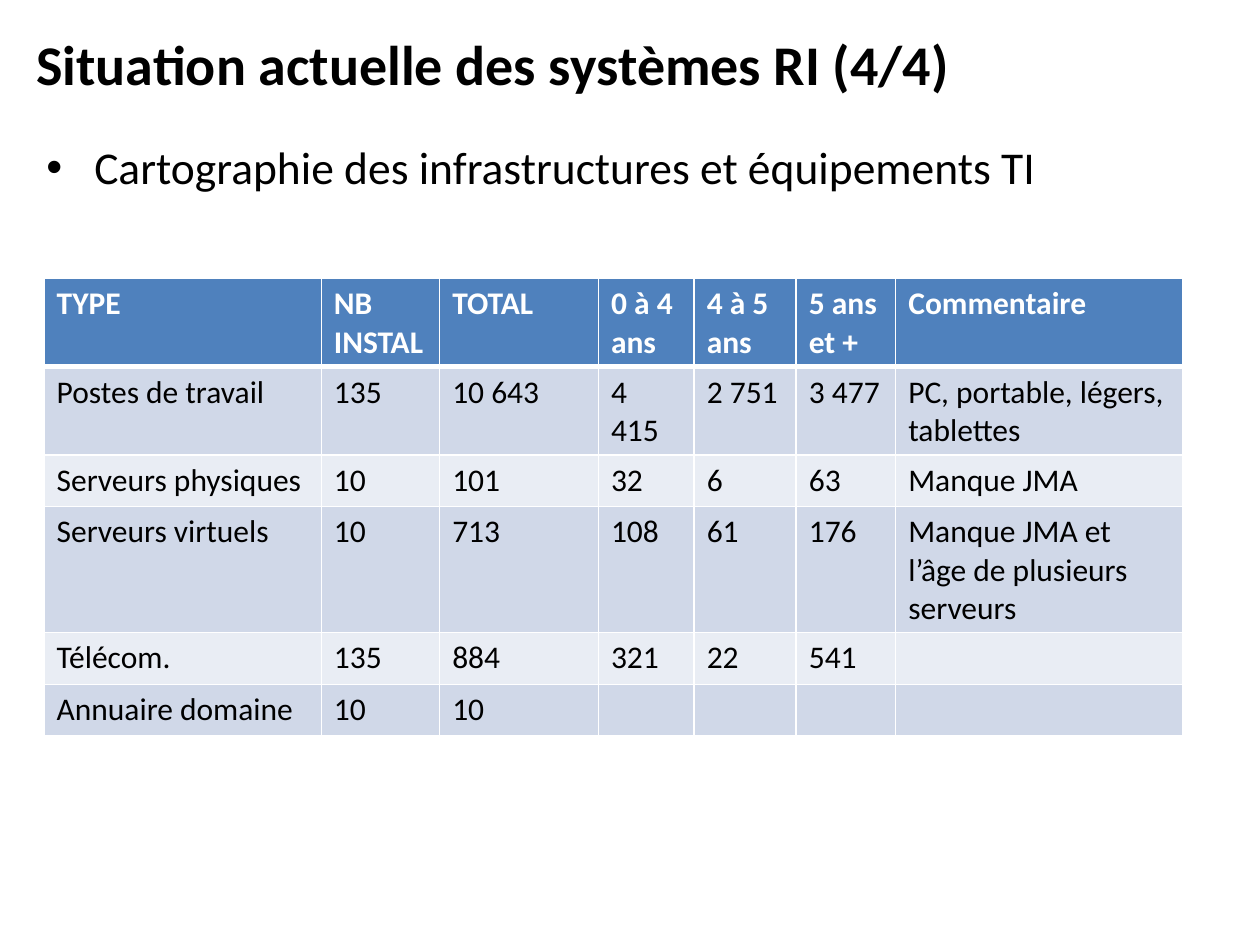
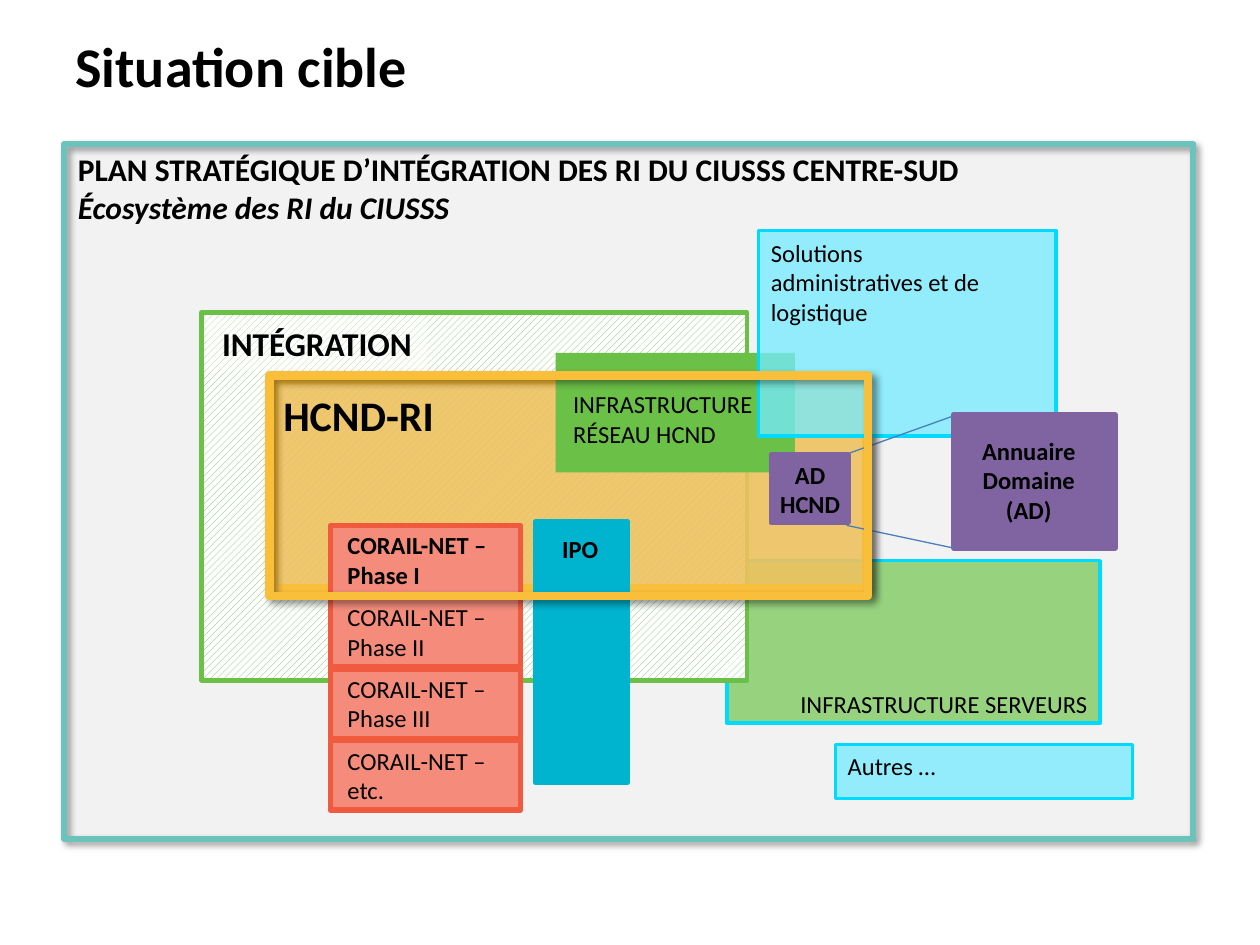
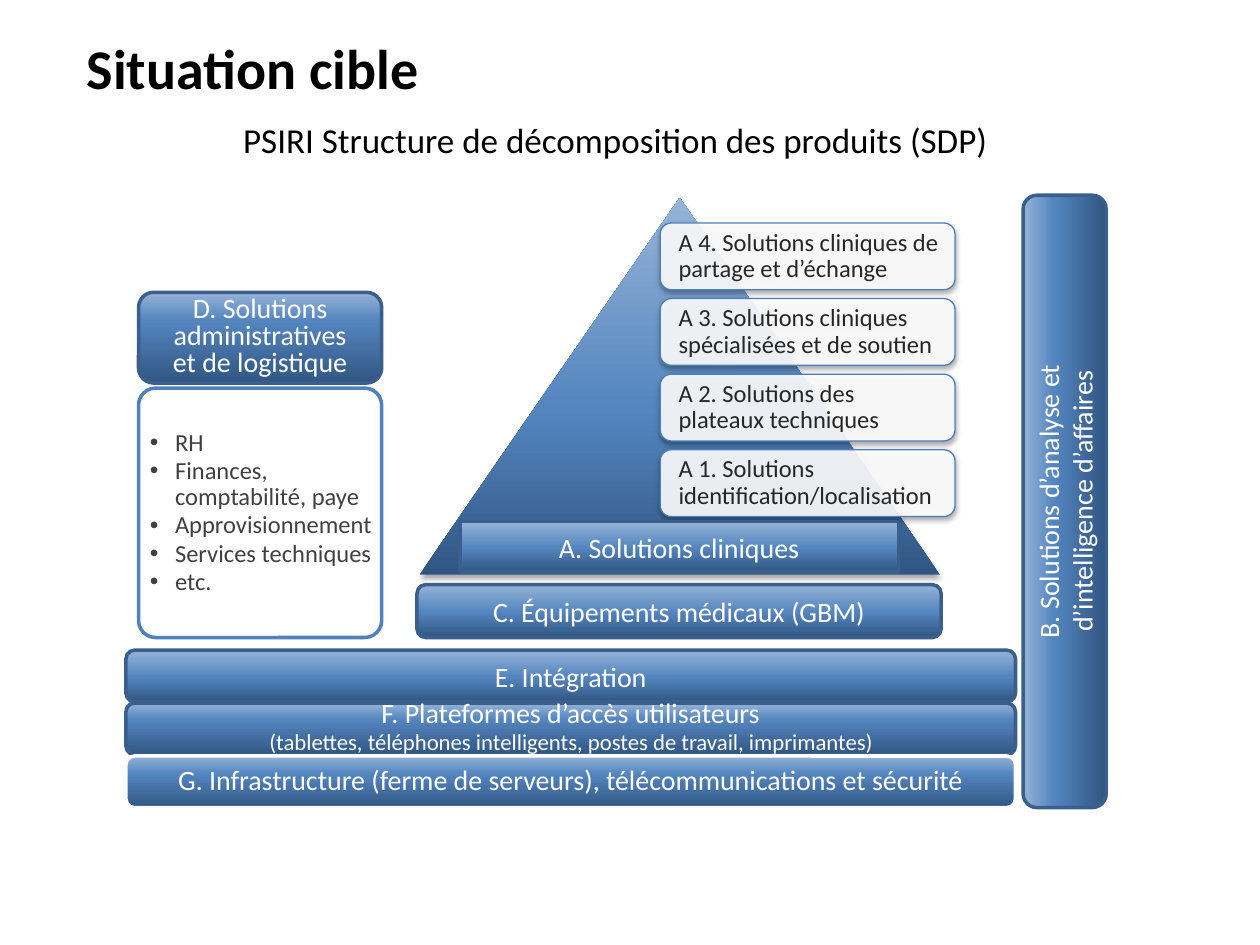
"""Build three slides on the current and target state of the RI systems."""
from lxml import etree
from pptx import Presentation
from pptx import util as u
from pptx.dml.color import RGBColor
from pptx.enum import dml, shapes, text
from pptx.oxml.ns import qn

PX = 9144
FONT = "Calibri"

BLACK = RGBColor(0x00, 0x00, 0x00)
WHITE = RGBColor(0xFF, 0xFF, 0xFF)
INK = RGBColor(0x26, 0x26, 0x26)
GREY_INK = RGBColor(0x40, 0x40, 0x40)
PALE_GREY = RGBColor(0xF2, 0xF2, 0xF2)
HEADER_BLUE = RGBColor(0x4F, 0x81, 0xBD)
BAND_DARK = RGBColor(0xD0, 0xD8, 0xE8)
BAND_LIGHT = RGBColor(0xE9, 0xED, 0xF4)
EDGE_BLUE = RGBColor(0x3A, 0x5F, 0x8C)
LINK_BLUE = RGBColor(0x4B, 0x7E, 0xBC)
DEEP_BLUE = RGBColor(0x31, 0x56, 0x83)
MID_BLUE = RGBColor(0x54, 0x85, 0xBF)
SOFT_BLUE = RGBColor(0x95, 0xB3, 0xD7)
GREEN = RGBColor(0x6B, 0xC0, 0x48)
SOFT_GREEN = RGBColor(0x97, 0xD3, 0x7F)
CYAN = RGBColor(0x00, 0xDA, 0xFE)
SOFT_CYAN = RGBColor(0x75, 0xEB, 0xFF)
OCEAN = RGBColor(0x00, 0xB4, 0xD0)
AMBER = RGBColor(0xFA, 0xBF, 0x3A)
SOFT_AMBER = RGBColor(0xFB, 0xCD, 0x65)
RED = RGBColor(0xF0, 0x5B, 0x40)
SOFT_RED = RGBColor(0xF5, 0x8C, 0x7B)
PURPLE = RGBColor(0x80, 0x64, 0xA2)
TEAL = RGBColor(0x6C, 0xC3, 0xBB)

RECT = shapes.MSO_SHAPE.RECTANGLE
ROUND = shapes.MSO_SHAPE.ROUNDED_RECTANGLE
TRIANGLE = shapes.MSO_SHAPE.ISOSCELES_TRIANGLE
LEFT, CENTER, RIGHT = text.PP_ALIGN.LEFT, text.PP_ALIGN.CENTER, text.PP_ALIGN.RIGHT
TOP, MIDDLE = text.MSO_ANCHOR.TOP, text.MSO_ANCHOR.MIDDLE
SOFT_SHADOW = (35, 3.1, 1.8, 90)

EQUIPMENT_COLUMNS = [220, 94, 126, 76, 81, 79, 228]
EQUIPMENT = [
    ["TYPE", "NB INSTAL", "TOTAL", "0 à 4 ans", "4 à 5 ans", "5 ans et +", "Commentaire"],
    ["Postes de travail", "135", "10 643", "4 415", "2 751", "3 477",
     "PC, portable, légers, tablettes"],
    ["Serveurs physiques", "10", "101", "32", "6", "63", "Manque JMA"],
    ["Serveurs virtuels", "10", "713", "108", "61", "176",
     "Manque JMA et l’âge de plusieurs serveurs"],
    ["Télécom.", "135", "884", "321", "22", "541", ""],
    ["Annuaire domaine", "10", "10", "", "", "", ""],
]


def px(*lengths):
    """Turn px lengths into EMU."""
    return [u.Emu(length * PX) for length in lengths]


def add_node(parent, tag, **attributes):
    """Append a DrawingML element with the given attributes."""
    return etree.SubElement(parent, qn(tag), {k: str(v) for k, v in attributes.items()})


def add_color(parent, color, alpha=100):
    """Append a colour, with its opacity in percent."""
    node = add_node(parent, "a:srgbClr", val=color)
    if alpha < 100:
        add_node(node, "a:alpha", val=alpha * 1000)


def write(frame, content, size=14, color=BLACK, bold=False, italic=False, align=LEFT,
          anchor=TOP, insets=(10, 5, 10, 5), spacing=None, after=None, bullet=0):
    """Write paragraphs; an entry may be a pair of text and format overrides."""
    frame.word_wrap = True
    frame.vertical_anchor = anchor
    (frame.margin_left, frame.margin_top,
     frame.margin_right, frame.margin_bottom) = px(*insets)
    entries = [content] if isinstance(content, str) else content
    for index, entry in enumerate(entries):
        words, changes = (entry, {}) if isinstance(entry, str) else entry
        paragraph = frame.add_paragraph() if index else frame.paragraphs[0]
        if bullet:
            properties = paragraph._p.get_or_add_pPr()
            properties.set("marL", str(bullet * PX))
            properties.set("indent", str(-bullet * PX))
            add_node(properties, "a:buFont", typeface="Arial")
            add_node(properties, "a:buChar", char="•")
        paragraph.alignment = align
        if spacing:
            paragraph.line_spacing = spacing
        if after is not None:
            paragraph.space_after = u.Pt(after)
        for number, line in enumerate(words.split("\n")):
            if number:
                paragraph.add_line_break()
            run = paragraph.add_run()
            run.text = line
            run.font.name = FONT
            run.font.size = u.Pt(changes.get("size", size))
            run.font.bold = bold
            run.font.italic = changes.get("italic", italic)
            run.font.color.rgb = color


def add_label(slide, box, content, **style):
    """Add a text box."""
    write(slide.shapes.add_textbox(*px(*box)).text_frame, content, **style)


def add_title(slide, left, top, words):
    """Add the slide title."""
    add_label(slide, (left, top, 859, 58), words, size=32, bold=True, anchor=MIDDLE)


def add_block(slide, box, fill=None, alpha=100, edge=None, weight=2, shadow=None, kind=RECT):
    """Add a preset shape with a plain fill, an outline and a shadow."""
    block = slide.shapes.add_shape(kind, *px(*box))
    if fill is None:
        block.fill.background()
    else:
        block.fill.solid()
        block.fill.fore_color.rgb = fill
        if alpha < 100:
            solid = block._element.spPr.find(qn("a:solidFill"))
            add_node(solid[0], "a:alpha", val=alpha * 1000)
    if edge is None:
        block.line.fill.background()
    else:
        block.line.color.rgb = edge
        block.line.width = u.Pt(weight)
    block.shadow.inherit = False
    if shadow:
        opacity, blur, distance, angle = shadow
        effects = block._element.spPr.find(qn("a:effectLst"))
        cast = add_node(effects, "a:outerShdw", blurRad=u.Pt(blur), dist=u.Pt(distance),
                        dir=angle * 60000, algn="ctr", rotWithShape=0)
        add_color(cast, BLACK, opacity)
    return block


def add_shaded(slide, box, middle, angle=90, **style):
    """Add a block shaded from deep to soft blue."""
    block = add_block(slide, box, **style)
    block.fill.gradient()
    block.fill.gradient_angle = angle
    stops = block._element.spPr.find(qn("a:gradFill")).find(qn("a:gsLst"))
    del stops[:]
    for position, color in ((0, DEEP_BLUE), (middle, MID_BLUE), (100, SOFT_BLUE)):
        add_color(add_node(stops, "a:gs", pos=position * 1000), color)
    return block


def add_product(slide, box, middle, content, angle=90, edge=EDGE_BLUE, kind=ROUND, **style):
    """Add a shaded block that names a product family."""
    block = add_shaded(slide, box, middle, angle, edge=edge, kind=kind)
    write(block.text_frame, content, size=16, color=WHITE, align=CENTER,
          anchor=MIDDLE, **style)
    return block


def add_link(slide, start, end):
    """Add a thin connecting line."""
    link = slide.shapes.add_connector(shapes.MSO_CONNECTOR.STRAIGHT, *px(*start, *end))
    link.line.color.rgb = LINK_BLUE
    link.line.width = u.Pt(0.75)
    add_node(link._element.spPr, "a:effectLst")


def set_borders(cell, **weights):
    """Draw white cell borders, ahead of the fill."""
    properties = cell._tc.get_or_add_tcPr()
    for index, (side, weight) in enumerate(weights.items()):
        border = add_node(properties, f"a:ln{side}", w=u.Pt(weight))
        add_color(add_node(border, "a:solidFill"), WHITE)
        properties.insert(index, border)


def add_equipment_table(slide):
    """Add the equipment inventory."""
    table = slide.shapes.add_table(len(EQUIPMENT), len(EQUIPMENT_COLUMNS),
                                   *px(35, 221, 906, 246)).table
    for column, width in zip(table.columns, EQUIPMENT_COLUMNS):
        column.width = px(width)[0]
    for row, values in enumerate(EQUIPMENT):
        header = row == 0
        table.rows[row].height = px(41)[0]
        for column, value in enumerate(values):
            cell = table.cell(row, column)
            cell.fill.solid()
            cell.fill.fore_color.rgb = (
                HEADER_BLUE if header else BAND_DARK if row % 2 else BAND_LIGHT)
            set_borders(cell, L=1, R=1, T=3 if row == 1 else 1, B=3 if header else 1)
            if value:
                write(cell.text_frame, value, size=18, bold=header,
                      color=WHITE if header else BLACK)


def build_inventory(slide):
    """Build the inventory slide."""
    add_title(slide, 19, 21, "Situation actuelle des systèmes RI (4/4)")
    add_label(slide, (27, 110, 953, 611), "Cartographie des infrastructures et équipements TI",
              size=26, spacing=0.9, bullet=38)
    add_equipment_table(slide)


def build_ecosystem(slide):
    """Build the map of the target ecosystem."""
    frame_shadow = (40, 4, 3, 45)
    add_title(slide, 50, 23, "Situation cible")
    add_block(slide, (52, 114, 896, 552), PALE_GREY, edge=EDGE_BLUE)
    add_block(slide, (577, 445, 296, 129), SOFT_GREEN, edge=CYAN)
    add_label(slide, (605, 542, 268, 33), "INFRASTRUCTURE SERVEURS", align=RIGHT)

    integration = add_block(slide, (160, 248, 433, 292), WHITE, edge=GREEN, weight=2.5)
    integration.fill.patterned()
    integration.fill.pattern = dml.MSO_PATTERN.WIDE_UPWARD_DIAGONAL
    integration.fill.fore_color.rgb = GREEN
    integration.fill.back_color.rgb = WHITE
    heading = add_block(slide, (164, 252, 175, 42), WHITE, alpha=37)
    write(heading.text_frame, "INTÉGRATION", size=19, bold=True, align=CENTER)

    add_block(slide, (218, 302, 470, 165), SOFT_AMBER, alpha=85, edge=AMBER, weight=5,
              shadow=(40, 4, 2, 45))
    add_label(slide, (215, 304, 156, 50), "HCND-RI", size=24, bold=True)
    add_block(slide, (425, 414, 73, 207), OCEAN, edge=OCEAN, weight=3)
    add_label(slide, (434, 419, 53, 34), "IPO", bold=True, align=CENTER)

    for step, phase in enumerate(["Phase I", "Phase II", "Phase III", "etc."]):
        top = 417 + 57 * step
        add_block(slide, (262, top, 151, 55), SOFT_RED, edge=RED, weight=3)
        add_label(slide, (266, top - 1, 153, 57), f"CORAIL-NET – {phase}", bold=step == 0)

    add_block(slide, (441, 280, 190, 95), GREEN)
    add_label(slide, (445, 304, 196, 57), "INFRASTRUCTURE\nRÉSEAU HCND")
    add_block(slide, (602, 183, 236, 163), SOFT_CYAN, alpha=76, edge=CYAN)
    add_label(slide, (602, 184, 206, 81), "Solutions administratives et de logistique")

    add_block(slide, (757, 329, 128, 106), PURPLE, edge=PURPLE, weight=3)
    add_label(slide, (763, 341, 107, 81), "Annuaire Domaine (AD)", bold=True, align=CENTER)
    add_link(slide, (673, 360), (757, 330))
    add_link(slide, (672, 417), (757, 435))
    add_block(slide, (612, 361, 61, 54), PURPLE, edge=PURPLE, weight=3)
    add_label(slide, (605, 360, 76, 57), "AD\nHCND", bold=True, align=CENTER)

    add_block(slide, (51, 114, 896, 552), edge=TEAL, weight=3.5, shadow=frame_shadow)
    add_label(slide, (52, 114, 873, 71),
              ["PLAN STRATÉGIQUE D’INTÉGRATION DES RI DU CIUSSS CENTRE-SUD",
               ("Écosystème des RI du CIUSSS", {"italic": True})], size=18, bold=True)
    add_block(slide, (214, 298, 475, 175), edge=AMBER, weight=5, shadow=frame_shadow)
    add_block(slide, (663, 591, 236, 43), SOFT_CYAN, alpha=76, edge=CYAN)
    add_label(slide, (663, 591, 206, 34), "Autres …")


def build_breakdown(slide):
    """Build the product breakdown slide."""
    add_title(slide, 59, 24, "Situation cible")
    add_label(slide, (146, 81, 685, 59), "PSIRI Structure de décomposition des produits (SDP)",
              size=20, align=CENTER, anchor=MIDDLE)

    add_shaded(slide, (333, 157, 413, 299), 44, kind=TRIANGLE, shadow=SOFT_SHADOW)
    clinical_layers = [
        "A 4. Solutions cliniques de partage et d’échange",
        "A 3. Solutions cliniques spécialisées et de soutien",
        "A 2. Solutions des plateaux techniques",
        "A 1. Solutions identification/localisation",
    ]
    for level, layer in enumerate(clinical_layers):
        card = add_block(slide, (524, 177 + 60 * level, 234, 53), WHITE, alpha=90,
                         edge=LINK_BLUE, weight=0.75, shadow=SOFT_SHADOW, kind=ROUND)
        write(card.text_frame, layer, color=INK, anchor=MIDDLE, spacing=0.9,
              insets=(12, 5, 8, 5))

    foundations = [
        (48, "E. Intégration", {}),
        (68, ["F. Plateformes d’accès utilisateurs",
              ("(tablettes, téléphones intelligents, postes de travail, imprimantes)",
               {"size": 13})], {"spacing": u.Pt(15)}),
        (65, "G. Infrastructure (ferme de serveurs), télécommunications et sécurité",
         {"spacing": 0.9, "edge": WHITE}),
    ]
    for level, (middle, name, style) in enumerate(foundations):
        add_product(slide, (100, 516 + 42 * level, 706, 41), middle, name, **style)

    services = add_block(slide, (110, 308, 193, 198), WHITE, edge=HEADER_BLUE, kind=ROUND)
    services.adjustments[0] = 0.07
    write(services.text_frame,
          ["RH", "Finances, comptabilité, paye", "Approvisionnement",
           "Services techniques", "etc."],
          color=GREY_INK, anchor=MIDDLE, insets=(5, 5, 0, 5), spacing=0.9, after=1, bullet=20)
    add_product(slide, (110, 232, 193, 72), 69,
                "D. Solutions administratives\net de logistique", spacing=0.8)
    add_product(slide, (365, 414, 348, 40), 48, "A. Solutions cliniques", kind=RECT)
    analysis = add_product(slide, (812, 155, 66, 486), 63,
                           "B. Solutions d’analyse et\nd’intelligence d’affaires", angle=180)
    analysis.text_frame._txBody.bodyPr.set("vert", "vert270")
    add_product(slide, (331, 464, 416, 42), 48, "C. Équipements médicaux (GBM)")


def main():
    """Build and save the deck."""
    deck = Presentation()
    deck.slide_width, deck.slide_height = px(1000, 750)
    for build in (build_inventory, build_ecosystem, build_breakdown):
        build(deck.slides.add_slide(deck.slide_layouts[6]))
    deck.save("out.pptx")


if __name__ == "__main__":
    main()
